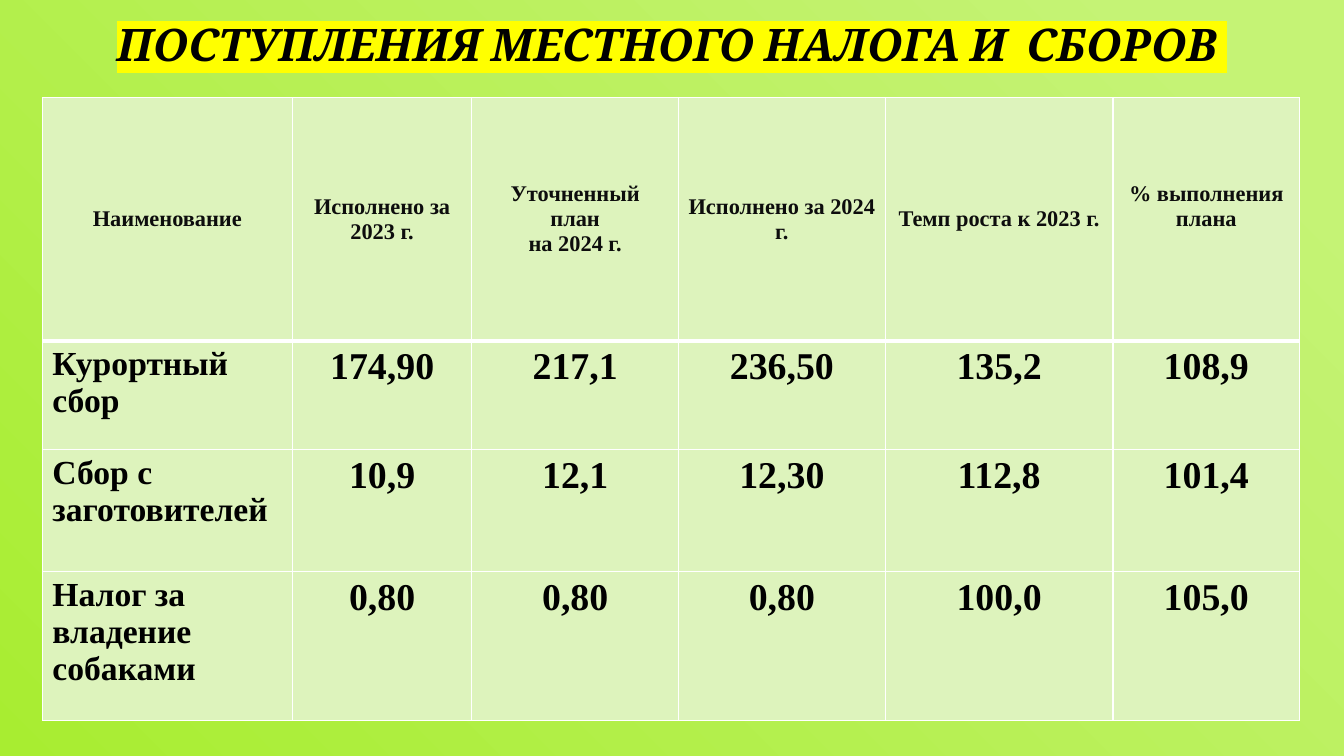
import pptx
import pptx.dml.color
import pptx.enum.text
import pptx.oxml
import pptx.oxml.ns
import pptx.util
from pptx.util import Inches

RGBColor = pptx.dml.color.RGBColor
BLACK = RGBColor(0x00, 0x00, 0x00)
INK = RGBColor(0x0D, 0x0D, 0x0D)
CELL = RGBColor(0xDD, 0xF3, 0xBC)
WHITE = RGBColor(0xFF, 0xFF, 0xFF)
YELLOW = RGBColor(0xFF, 0xFF, 0x00)
LIGHT = RGBColor(0xC5, 0xF3, 0x75)
LIME = RGBColor(0xA8, 0xED, 0x31)
CENTER = pptx.enum.text.PP_ALIGN.CENTER
LEFT = pptx.enum.text.PP_ALIGN.LEFT
MIDDLE = pptx.enum.text.MSO_ANCHOR.MIDDLE
TOP = pptx.enum.text.MSO_ANCHOR.TOP
NS = pptx.oxml.ns.nsdecls("a")

COLS = [2.48, 1.78, 2.05, 2.05, 2.26, 1.85]
ROWS = [2.41, 1.08, 1.21, 1.48]
DATA = [
    ["Наименование", "Исполнено за 2023 г.", "Уточненный\nплан\nна 2024 г.",
     "Исполнено за 2024 г.", "Темп роста к 2023 г.", "% выполнения плана"],
    ["Курортный сбор", "174,90", "217,1", "236,50", "135,2", "108,9"],
    ["Сбор с заготовителей", "10,9", "12,1", "12,30", "112,8", "101,4"],
    ["Налог за владение собаками", "0,80", "0,80", "0,80", "100,0", "105,0"],
]


def format_text(tf, font, size, color, align):
    """Format every run of a text frame in bold."""
    for p in tf.paragraphs:
        p.alignment = align
        for r in p.runs:
            r.font.name = font
            r.font.size = pptx.util.Pt(size)
            r.font.bold = True
            r.font.color.rgb = color


def set_borders(cell, widths):
    """Draw white cell borders with widths in points, keyed by side."""
    tc_pr = cell._tc.get_or_add_tcPr()
    for i, (side, width) in enumerate(widths.items()):
        tc_pr.insert(i, pptx.oxml.parse_xml(
            f'<a:ln{side} {NS} w="{pptx.util.Pt(width)}"><a:solidFill>'
            f'<a:srgbClr val="{WHITE}"/></a:solidFill></a:ln{side}>'))


def set_background(s):
    """Fill the slide with a diagonal green gradient."""
    fill = s.background.fill
    fill.gradient()
    fill.gradient_angle = 225
    for stop, color, position in zip(fill.gradient_stops, (LIGHT, LIME), (0.1, 1)):
        stop.color.rgb = color
        stop.position = position


def add_title(s, x, y, w, h):
    """Place the highlighted title in the upper part of its box."""
    sp = s.shapes.title
    sp.left, sp.top, sp.width, sp.height = map(Inches, (x, y, w, h))
    tf = sp.text_frame
    tf.text = "ПОСТУПЛЕНИЯ МЕСТНОГО НАЛОГА И  СБОРОВ "
    tf.word_wrap = True
    tf.auto_size = pptx.enum.text.MSO_AUTO_SIZE.NONE
    tf.vertical_anchor = MIDDLE
    tf.margin_bottom = Inches(0.53)
    format_text(tf, "Cambria", 32, BLACK, CENTER)
    r = tf.paragraphs[0].runs[0]
    r.font.italic = True
    r.font._element.find(pptx.oxml.ns.qn("a:solidFill")).addnext(
        pptx.oxml.parse_xml(
            f'<a:highlight {NS}><a:srgbClr val="{YELLOW}"/></a:highlight>'))


def add_revenue_table(s, x, y, w, h):
    """Build the table of local tax and fee receipts."""
    table = s.shapes.add_table(
        len(ROWS), len(COLS), *map(Inches, (x, y, w, h))).table
    table.first_row = table.horz_banding = False
    for column, width in zip(table.columns, COLS):
        column.width = Inches(width)
    for i, (row, height) in enumerate(zip(table.rows, ROWS)):
        row.height = Inches(height)
        for j, cell in enumerate(row.cells):
            cell.text_frame.text = DATA[i][j]
            cell.vertical_anchor = TOP if i else MIDDLE
            size = 16 if i == 0 else 24 if j == 0 else 27
            format_text(cell.text_frame, "Times New Roman", size,
                        BLACK if i else INK, LEFT if i and j == 0 else CENTER)
            cell.fill.solid()
            cell.fill.fore_color.rgb = CELL
            set_borders(cell, {"L": 1, "R": 1, "T": 3 if i == 1 else 1,
                               "B": 1 if i else 3})
    table.cell(0, len(COLS) - 1).margin_bottom = Inches(0.3)


def main():
    """Create the presentation."""
    prs = pptx.Presentation()
    prs.slide_width, prs.slide_height = Inches(13.33), Inches(7.5)
    s = prs.slides.add_slide(prs.slide_layouts[5])
    set_background(s)
    add_title(s, 0, 0, 13.33, 1.34)
    add_revenue_table(s, 0.42, 0.97, sum(COLS), sum(ROWS))
    prs.save("out.pptx")


if __name__ == "__main__":
    main()
